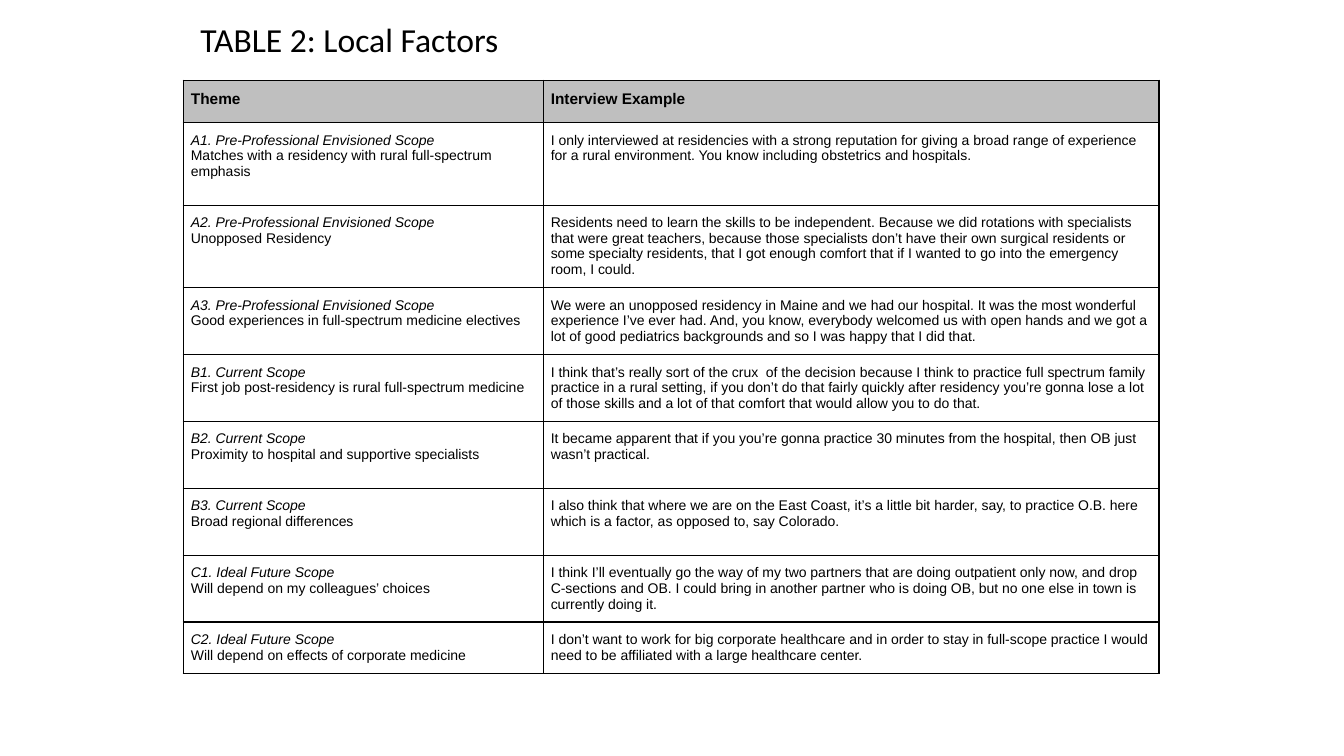
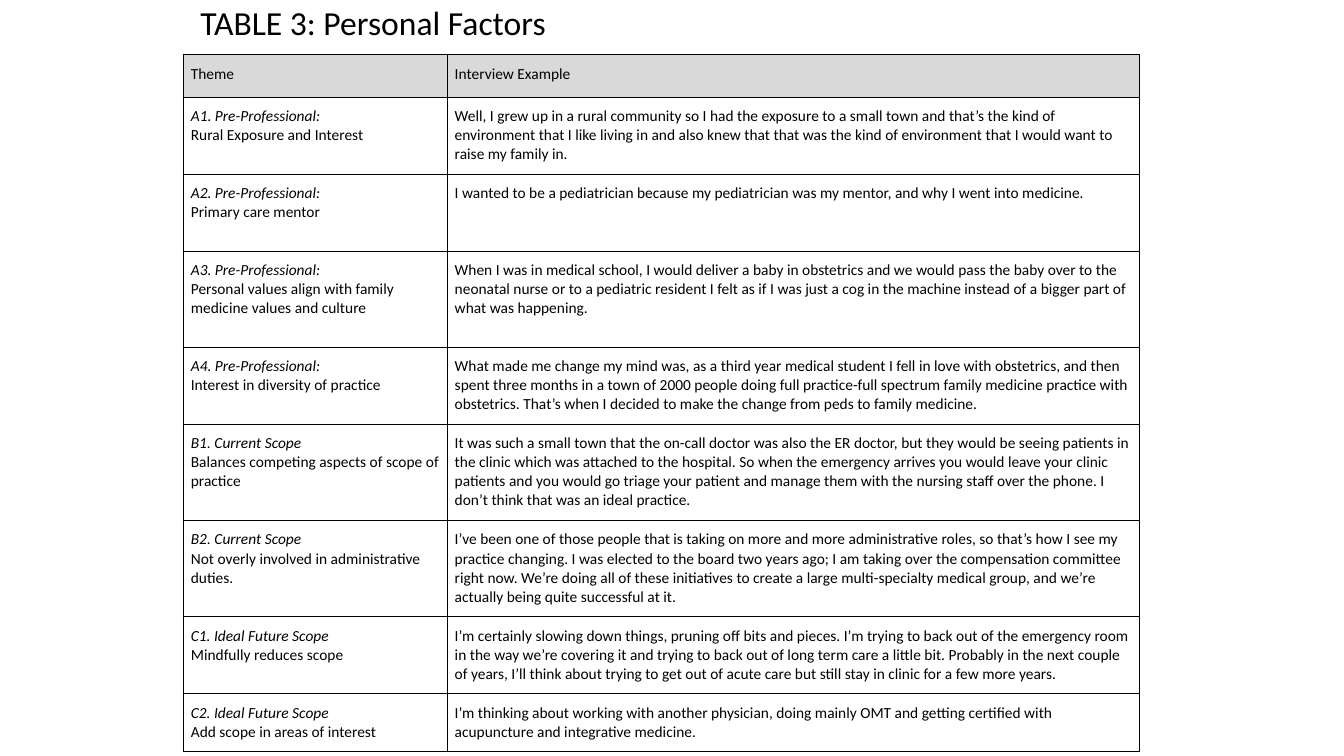
from dataclasses import dataclass

from lxml import etree
from pptx import Presentation, util as u
from pptx.dml.color import RGBColor
from pptx.enum import text
from pptx.oxml import ns

COLORS = {"ink": "000000", "local_header": "BFBFBF", "personal_header": "D9D9D9"}
TITLE_FONT, TITLE_SIZE = "Calibri", 24
HEADINGS = ("Theme", "Interview Example")
HEADER_SIZE = 11
LEFT = 4.62
HEADER_HEIGHT = 1.07
CELL_SIDE, CELL_END = 0.19, 0.25
BORDER_POINTS = 1


@dataclass
class Look:
    """What sets one table apart; lengths in cm, sizes in points."""
    title_top: float
    table_top: float
    columns: tuple
    header_fill: str
    font: str
    body_size: int
    line_height: float
    bold_header: bool


LOCAL_LOOK = Look(0.23, 2.02, (9.07, 15.52), "local_header", "Arial", 10, 0.395, True)
PERSONAL_LOOK = Look(-0.2, 1.38, (6.65, 17.45), "personal_header", "Calibri", 11, 0.48, False)

# Each row: scope, theme, interview example, height in text lines
LOCAL_FACTORS = [
    ("A1. Pre-Professional Envisioned Scope",
     "Matches with a residency with rural full-spectrum emphasis",
     "I only interviewed at residencies with a strong reputation for giving a broad range "
     "of experience for a rural environment. You know including obstetrics and hospitals.", 4),
    ("A2. Pre-Professional Envisioned Scope",
     "Unopposed Residency",
     "Residents need to learn the skills to be independent. Because we did rotations with "
     "specialists that were great teachers, because those specialists don’t have their own "
     "surgical residents or some specialty residents, that I got enough comfort that if I "
     "wanted to go into the emergency room, I could.", 4),
    ("A3. Pre-Professional Envisioned Scope",
     "Good experiences in full-spectrum medicine electives",
     "We were an unopposed residency in Maine and we had our hospital. It was the most "
     "wonderful experience I’ve ever had. And, you know, everybody welcomed us with open "
     "hands and we got a lot of good pediatrics backgrounds and so I was happy that I did "
     "that.", 3),
    ("B1. Current Scope",
     "First job post-residency is rural full-spectrum medicine",
     "I think that’s really sort of the crux  of the decision because I think to practice "
     "full spectrum family practice in a rural setting, if you don’t do that fairly quickly "
     "after residency you’re gonna lose a lot of those skills and a lot of that comfort that "
     "would allow you to do that.", 3),
    ("B2. Current Scope",
     "Proximity to hospital and supportive specialists",
     "It became apparent that if you you’re gonna practice 30 minutes from the hospital, "
     "then OB just wasn’t practical.", 3),
    ("B3. Current Scope",
     "Broad regional differences",
     "I also think that where we are on the East Coast, it’s a little bit harder, say, to "
     "practice O.B. here which is a factor, as opposed to, say Colorado.", 3),
    ("C1. Ideal Future Scope",
     "Will depend on my colleagues’ choices",
     "I think I’ll eventually go the way of my two partners that are doing outpatient only "
     "now, and drop C-sections and OB. I could bring in another partner who is doing OB, but "
     "no one else in town is currently doing it.", 3),
    ("C2. Ideal Future Scope",
     "Will depend on effects of corporate medicine",
     "I don’t want to work for big corporate healthcare and in order to stay in full-scope "
     "practice I would need to be affiliated with a large healthcare center.", 2),
]

PERSONAL_FACTORS = [
    ("A1. Pre-Professional:",
     "Rural Exposure and Interest",
     "Well, I grew up in a rural community so I had the exposure to a small town and that’s "
     "the kind of environment that I like living in and also knew that that was the kind of "
     "environment that I would want to raise my family in.", 3),
    ("A2. Pre-Professional:",
     "Primary care mentor",
     "I wanted to be a pediatrician because my pediatrician was my mentor, and why I went "
     "into medicine.", 3),
    ("A3. Pre-Professional:",
     "Personal values align with family medicine values and culture",
     "When I was in medical school, I would deliver a baby in obstetrics and we would pass "
     "the baby over to the neonatal nurse or to a pediatric resident I felt as if I was just "
     "a cog in the machine instead of a bigger part of what was happening.", 4),
    ("A4. Pre-Professional:",
     "Interest in diversity of practice",
     "What made me change my mind was, as a third year medical student I fell in love with "
     "obstetrics, and then spent three months in a town of 2000 people doing full "
     "practice-full spectrum family medicine practice with obstetrics. That’s when I decided "
     "to make the change from peds to family medicine.", 3),
    ("B1. Current Scope",
     "Balances competing aspects of scope of practice",
     "It was such a small town that the on-call doctor was also the ER doctor, but they would "
     "be seeing patients in the clinic which was attached to the hospital. So when the "
     "emergency arrives you would leave your clinic patients and you would go triage your "
     "patient and manage them with the nursing staff over the phone. I don’t think that was "
     "an ideal practice.", 4),
    ("B2. Current Scope",
     "Not overly involved in administrative duties.",
     "I’ve been one of those people that is taking on more and more administrative roles, so "
     "that’s how I see my practice changing. I was elected to the board two years ago; I am "
     "taking over the compensation committee right now. We’re doing all of these initiatives "
     "to create a large multi-specialty medical group, and we’re actually being quite "
     "successful at it.", 4),
    ("C1. Ideal Future Scope",
     "Mindfully reduces scope",
     "I’m certainly slowing down things, pruning off bits and pieces. I’m trying to back out "
     "of the emergency room in the way we’re covering it and trying to back out of long term "
     "care a little bit. Probably in the next couple of years, I’ll think about trying to get "
     "out of acute care but still stay in clinic for a few more years.", 3),
    ("C2. Ideal Future Scope",
     "Add scope in areas of interest",
     "I’m thinking about working with another physician, doing mainly OMT and getting "
     "certified with acupuncture and integrative medicine.", 2),
]


def color(key):
    return RGBColor.from_string(COLORS[key])


def add_run(paragraph, words, font, size, bold=False, italic=False):
    run = paragraph.add_run()
    run.text = words
    run.font.name = font
    run.font.size = u.Pt(size)
    run.font.bold = bold
    run.font.italic = italic
    run.font.color.rgb = color("ink")


def set_margins(holder, side, end):
    holder.margin_left = holder.margin_right = u.Cm(side)
    holder.margin_top = holder.margin_bottom = u.Cm(end)


def add_title(slide, words, top):
    box = slide.shapes.add_textbox(u.Cm(4.8), u.Cm(top), u.Cm(20.37), u.Cm(2.39))
    frame = box.text_frame
    frame.word_wrap = True
    set_margins(frame, 0.25, 0.25)
    add_run(frame.paragraphs[0], words, TITLE_FONT, TITLE_SIZE)


def add_borders(cell):
    properties = cell._tc.get_or_add_tcPr()
    for side in ("a:lnL", "a:lnR", "a:lnT", "a:lnB"):
        line = etree.SubElement(properties, ns.qn(side), w=str(u.Pt(BORDER_POINTS)))
        fill = etree.SubElement(line, ns.qn("a:solidFill"))
        etree.SubElement(fill, ns.qn("a:srgbClr"), val=COLORS["ink"])


def style_cell(cell, fill=None):
    set_margins(cell, CELL_SIDE, CELL_END)
    cell.vertical_anchor = text.MSO_ANCHOR.TOP
    add_borders(cell)
    if fill:
        cell.fill.solid()
        cell.fill.fore_color.rgb = color(fill)
    else:
        cell.fill.background()


def add_factor_table(slide, factors, look):
    heights = [HEADER_HEIGHT] + [2 * CELL_END + lines * look.line_height
                                 for *_, lines in factors]
    table = slide.shapes.add_table(
        len(heights), len(HEADINGS), u.Cm(LEFT), u.Cm(look.table_top),
        u.Cm(sum(look.columns)), u.Cm(sum(heights))).table
    table.first_row = table.horz_banding = False
    for column, width in zip(table.columns, look.columns):
        column.width = u.Cm(width)
    for row, height in zip(table.rows, heights):
        row.height = u.Cm(height)

    for index, heading in enumerate(HEADINGS):
        cell = table.cell(0, index)
        style_cell(cell, look.header_fill)
        add_run(cell.text_frame.paragraphs[0], heading, look.font, HEADER_SIZE,
                bold=look.bold_header)

    for index, (scope, theme, example, _) in enumerate(factors, start=1):
        theme_cell, example_cell = table.cell(index, 0), table.cell(index, 1)
        style_cell(theme_cell)
        style_cell(example_cell)
        theme_frame = theme_cell.text_frame
        add_run(theme_frame.paragraphs[0], scope, look.font, look.body_size, italic=True)
        add_run(theme_frame.add_paragraph(), theme, look.font, look.body_size)
        add_run(example_cell.text_frame.paragraphs[0], example, look.font, look.body_size)


def main():
    deck = Presentation()
    deck.slide_width, deck.slide_height = u.Cm(33.87), u.Cm(19.05)
    for title, factors, look in (
            ("TABLE 2: Local Factors", LOCAL_FACTORS, LOCAL_LOOK),
            ("TABLE 3: Personal Factors", PERSONAL_FACTORS, PERSONAL_LOOK)):
        slide = deck.slides.add_slide(deck.slide_layouts[6])
        add_factor_table(slide, factors, look)
        add_title(slide, title, look.title_top)
    deck.save("out.pptx")


if __name__ == "__main__":
    main()
